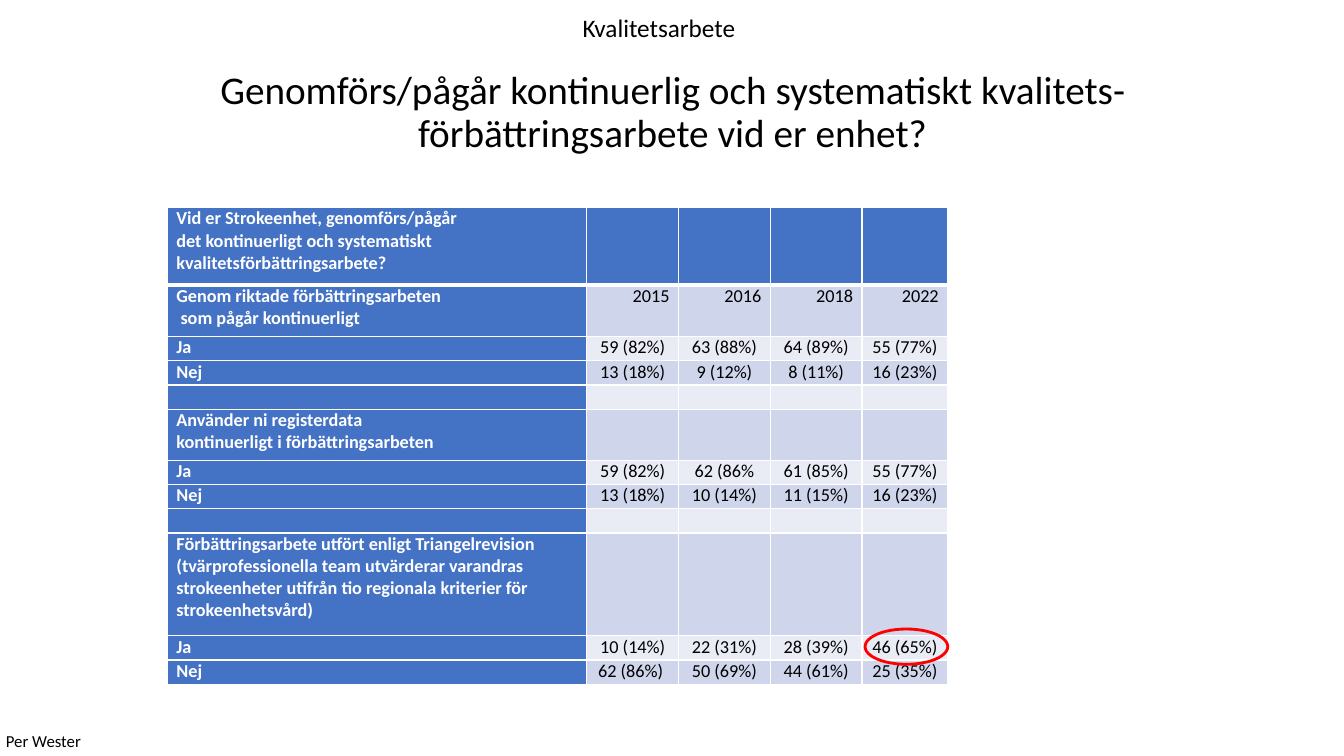
from lxml import etree
from pptx import Presentation
from pptx.dml.color import RGBColor
from pptx.enum.shapes import MSO_SHAPE
from pptx.enum.text import MSO_ANCHOR, MSO_AUTO_SIZE, PP_ALIGN
from pptx.oxml.ns import qn
from pptx.util import Emu, Pt

EMU_PER_PX = 9144
FONT = "Calibri"
TABLE_SIZE = 13

BLACK = RGBColor(0x00, 0x00, 0x00)
WHITE = RGBColor(0xFF, 0xFF, 0xFF)
BLUE = RGBColor(0x44, 0x72, 0xC4)
BAND_DARK = RGBColor(0xCF, 0xD5, 0xEA)
BAND_LIGHT = RGBColor(0xE9, 0xEB, 0xF5)
RED = RGBColor(0xFF, 0x00, 0x00)

LEFT, CENTER, RIGHT = PP_ALIGN.LEFT, PP_ALIGN.CENTER, PP_ALIGN.RIGHT
TOP, MIDDLE = MSO_ANCHOR.TOP, MSO_ANCHOR.MIDDLE
NO_FIT, GROW = MSO_AUTO_SIZE.NONE, MSO_AUTO_SIZE.SHAPE_TO_FIT_TEXT
ELLIPSE = MSO_SHAPE.OVAL

COLUMN_WIDTHS = [416, 91, 91, 91, 85]
YEAR_ROW = 1
BLANK_ROW = (24, "")
SURVEY = [
    (77, "Vid er Strokeenhet, genomförs/pågår\vdet kontinuerligt och systematiskt "
         "kvalitetsförbättringsarbete?"),
    (51, "Genom riktade förbättringsarbeten\v som pågår kontinuerligt",
     "2015", "2016", "2018", "2022"),
    (24, "Ja", "59 (82%)", "63 (88%)", "64 (89%)", "55 (77%)"),
    (24, "Nej", "13 (18%)", "9 (12%)", "8 (11%)", "16 (23%)"),
    BLANK_ROW,
    (51, "Använder ni registerdata \vkontinuerligt i förbättringsarbeten"),
    (24, "Ja", "59 (82%)", "62 (86%", "61 (85%)", "55 (77%)"),
    (24, "Nej", "13 (18%)", "10 (14%)", "11 (15%)", "16 (23%)"),
    BLANK_ROW,
    (102, "Förbättringsarbete utfört enligt Triangelrevision (tvärprofessionella team "
          "utvärderar varandras strokeenheter utifrån tio regionala kriterier för "
          "strokeenhetsvård)"),
    (24, "Ja", "10 (14%)", "22 (31%)", "28 (39%)", "46 (65%)"),
    (24, "Nej", "62 (86%) ", "50 (69%)", "44 (61%)", "25 (35%)"),
]


def px(length):
    """Turn whole px into EMU."""
    return Emu(length * EMU_PER_PX)


class SlideBuilder:
    """Draw styled elements on the current slide."""

    def __init__(self, slide, font):
        """Keep the slide and its font."""
        self.slide = slide
        self.font = font

    def style(self, paragraph, size, color, bold, align):
        """Format a paragraph and its runs."""
        paragraph.alignment = align
        for run in paragraph.runs:
            run.font.name = self.font
            run.font.size = Pt(size)
            run.font.bold = bold
            run.font.color.rgb = color

    def text(self, wording, box, size, align=CENTER, anchor=TOP, wrap=True,
             fit=GROW, spacing=1.0):
        """Add a text box."""
        frame = self.slide.shapes.add_textbox(*map(px, box)).text_frame
        frame.text = wording
        frame.word_wrap = wrap
        frame.auto_size = fit
        frame.vertical_anchor = anchor
        paragraph = frame.paragraphs[0]
        paragraph.line_spacing = spacing
        self.style(paragraph, size, BLACK, False, align)

    def borders(self, cell, top, bottom):
        """Give a cell white borders with the stated top and bottom widths."""
        properties = cell._tc.get_or_add_tcPr()
        for side, width in (("L", 1), ("R", 1), ("T", top), ("B", bottom)):
            line = etree.SubElement(properties, qn(f"a:ln{side}"), w=str(Pt(width)))
            fill = etree.SubElement(line, qn("a:solidFill"))
            etree.SubElement(fill, qn("a:srgbClr"), val=str(WHITE))

    def cell(self, cell, wording, fill, color, bold, align):
        """Fill one table cell with text and colour."""
        cell.margin_left = cell.margin_right = px(9)
        cell.margin_top = cell.margin_bottom = 0
        cell.fill.solid()
        cell.fill.fore_color.rgb = fill
        cell.text_frame.text = wording
        paragraph = cell.text_frame.paragraphs[0]
        self.style(paragraph, TABLE_SIZE, color, bold, align)
        if not wording:
            etree.SubElement(paragraph._p, qn("a:endParaRPr"), sz=str(TABLE_SIZE * 100))

    def table(self, left, top, widths, rows):
        """Add the survey table with a blue header row and label column."""
        heights = [height for height, *_ in rows]
        table = self.slide.shapes.add_table(
            len(rows), len(widths), px(left), px(top),
            px(sum(widths)), px(sum(heights))).table
        for column, width in zip(table.columns, widths):
            column.width = px(width)
        for r, (height, label, *answers) in enumerate(rows):
            table.rows[r].height = px(height)
            answers = answers or [""] * (len(widths) - 1)
            band = BAND_DARK if r % 2 else BAND_LIGHT
            for c, wording in enumerate([label, *answers]):
                heading = r == 0 or c == 0
                align = LEFT if heading else RIGHT if r == YEAR_ROW else CENTER
                cell = table.cell(r, c)
                self.borders(cell, 3 if r == 1 else 1, 3 if r == 0 else 1)
                self.cell(cell, wording, BLUE if heading else band,
                          WHITE if heading else BLACK, heading, align)

    def ring(self, box, color, width):
        """Add an unfilled ellipse."""
        ring = self.slide.shapes.add_shape(ELLIPSE, *map(px, box))
        ring.shadow.inherit = False
        ring.fill.background()
        ring.line.color.rgb = color
        ring.line.width = Pt(width)


def main():
    """Build and save the slide."""
    deck = Presentation()
    deck.slide_width, deck.slide_height = px(1333), px(750)
    builder = SlideBuilder(deck.slides.add_slide(deck.slide_layouts[6]), FONT)
    builder.text("Genomförs/pågår kontinuerlig och systematiskt "
                 "kvalitets-förbättringsarbete vid er enhet?",
                 (92, 40, 1150, 145), 28, anchor=MIDDLE, fit=NO_FIT, spacing=0.9)
    builder.table(166, 206, COLUMN_WIDTHS, SURVEY)
    builder.ring((858, 624, 82, 35), RED, 2)
    builder.text("Kvalitetsarbete", (320, 7, 667, 40), 18)
    builder.text("Per Wester", (-4, 720, 95, 30), 12, align=LEFT, wrap=False)
    deck.save("out.pptx")


if __name__ == "__main__":
    main()
